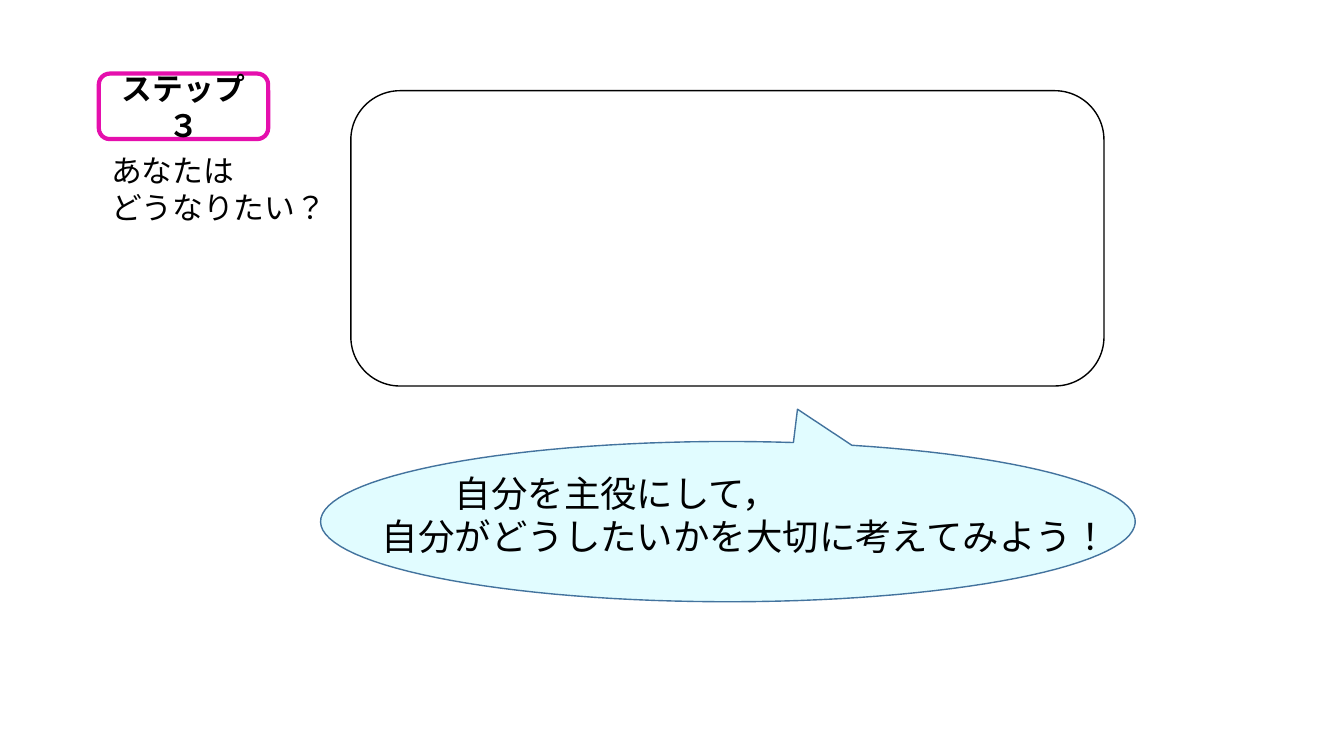
from math import acos, cos, pi, sin

from lxml.etree import SubElement
from pptx import Presentation
from pptx.dml.color import RGBColor
from pptx.enum.lang import MSO_LANGUAGE_ID as Language
from pptx.enum.shapes import MSO_SHAPE as Shape
from pptx.enum.text import MSO_ANCHOR as Anchor, PP_ALIGN as Align
from pptx.oxml.ns import qn
from pptx.util import Inches, Pt

# Content
STEP = ["ステップ３"]
QUESTION = ["あなたは", "どうなりたい？"]
ADVICE = ["自分を主役にして，", "自分がどうしたいかを大切に考えてみよう！"]

COLORS = {"ink": "000000", "paper": "FFFFFF", "step": "E50FAD",
          "bubble": "E1FCFF", "bubble_line": "43739E"}
EAST_ASIAN_FONT = "Noto Sans CJK JP"

# Places: left, top, width, height in inches
ANSWER_BOX = (3.48, 0.9, 7.47, 2.93)
STEP_BOX = (0.98, 0.73, 1.68, 0.65)
QUESTION_BOX = (0.74, 1.55, 3.84, 0.65)
BUBBLE = (3.18, 4.38, 8.08, 1.59)
ADVICE_BOX = (3.69, 4.62, 9.11, 0.98)
TAIL_TIP = (7.91, 4.06)
TAIL_BASE = (7.87, 8.45)
ARC_STEPS = 120


def color(name):
    return RGBColor.from_string(COLORS[name])


def paint(shape, fill, line, width):
    shape.shadow.inherit = False
    if fill:
        shape.fill.solid()
        shape.fill.fore_color.rgb = color(fill)
    else:
        shape.fill.background()
    if line:
        shape.line.color.rgb = color(line)
        shape.line.width = Pt(width)
    else:
        shape.line.fill.background()


def add_box(slide, place, fill=None, line=None, width=1):
    shape = slide.shapes.add_shape(Shape.ROUNDED_RECTANGLE, *map(Inches, place))
    paint(shape, fill, line, width)
    return shape


def write(shape, lines, size, font, align=Align.LEFT, anchor=Anchor.MIDDLE,
          insets=(0.08, 0.08), bold=False, indents=()):
    frame = shape.text_frame
    frame.word_wrap = True
    frame.vertical_anchor = anchor
    frame.margin_left = frame.margin_right = Inches(insets[0])
    frame.margin_top = frame.margin_bottom = Inches(insets[1])
    frame.text = "\n".join(lines)
    for paragraph in frame.paragraphs:
        paragraph.alignment = align
        for run in paragraph.runs:
            run.font.size = Pt(size)
            run.font.name = font
            run.font.bold = bold
            run.font.language_id = Language.JAPANESE
            run.font.color.rgb = color("ink")
            SubElement(run.font._element, qn("a:ea"), typeface=EAST_ASIAN_FONT)
    for paragraph, indent in zip(frame.paragraphs, indents):
        properties = paragraph._p.get_or_add_pPr()
        properties.set("marL", str(int(indent)))
        properties.set("indent", "0")


def add_bubble(slide):
    """Ellipse whose outline opens into a tail pointing up at the answer."""
    left, top, width, height = BUBBLE
    center_x, center_y = left + width / 2, top + height / 2
    base_left, base_right = (acos((x - center_x) / (width / 2)) for x in TAIL_BASE)
    sweep = 2 * pi - (base_left - base_right)
    points = []
    for step in range(ARC_STEPS + 1):
        angle = base_right - sweep * step / ARC_STEPS
        points.append((Inches(center_x + width / 2 * cos(angle)),
                       Inches(center_y - height / 2 * sin(angle))))
    # Points are in EMU, because the builder rounds to whole units
    builder = slide.shapes.build_freeform(*map(Inches, TAIL_TIP))
    builder.add_line_segments(points, close=True)
    paint(builder.convert_to_shape(), "bubble", "bubble_line", 1)


def main():
    presentation = Presentation()
    presentation.slide_width, presentation.slide_height = Inches(13.33), Inches(7.5)
    slide = presentation.slides.add_slide(presentation.slide_layouts[6])

    # Answer area, step label and question
    add_box(slide, ANSWER_BOX, line="ink")
    step = add_box(slide, STEP_BOX, "paper", "step", 3)
    write(step, STEP, 22, "Calibri", align=Align.CENTER, bold=True)
    question = add_box(slide, QUESTION_BOX)
    write(question, QUESTION, 22, "Cambria", indents=[Inches(0.25)] * 2)

    # Advice in the speech bubble, first line set in by two characters
    add_bubble(slide)
    advice = slide.shapes.add_textbox(*map(Inches, ADVICE_BOX))
    write(advice, ADVICE, 26, EAST_ASIAN_FONT, anchor=Anchor.TOP,
          insets=(0.1, 0.05), indents=[Pt(2 * 26), 0])

    presentation.save("out.pptx")


if __name__ == "__main__":
    main()
